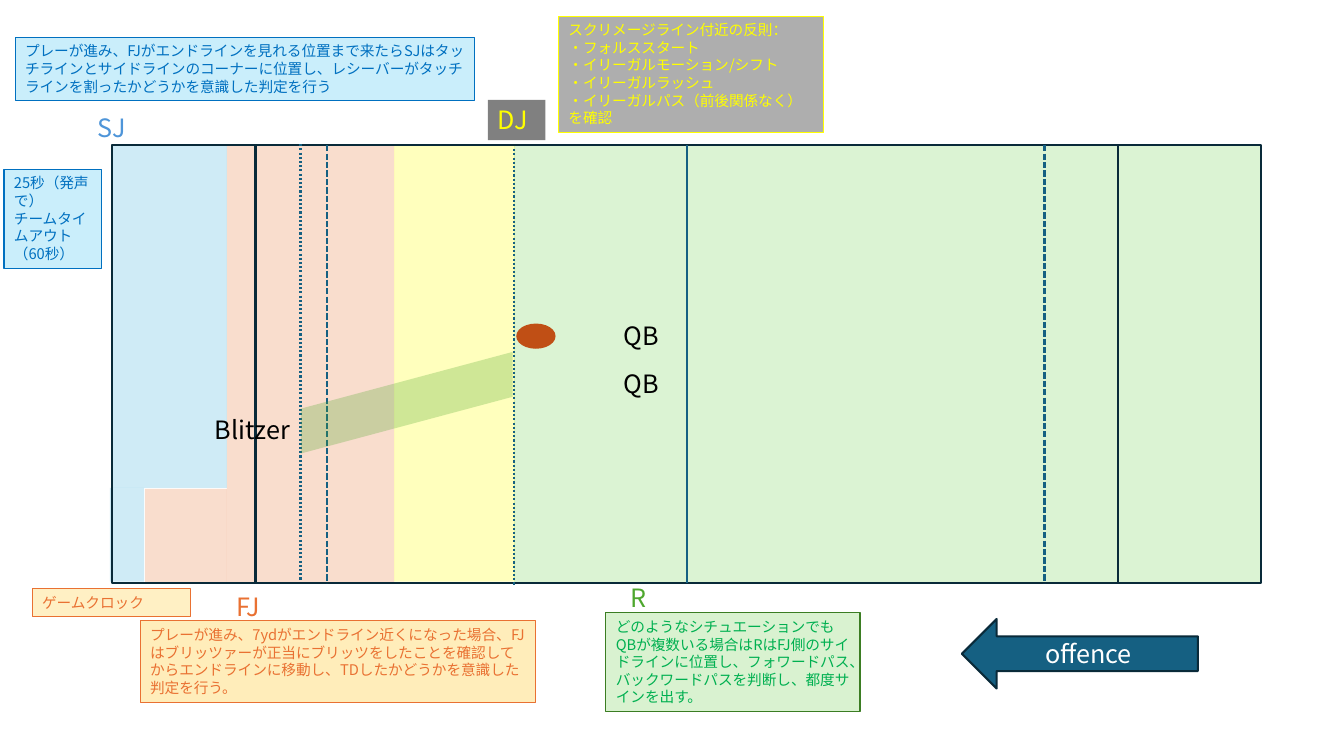
import pptx
import pptx.dml.color
import pptx.enum.dml
import pptx.enum.shapes
import pptx.enum.text
import pptx.oxml.ns
import pptx.util
from lxml import etree

FONT = "Noto Sans CJK JP"
SHAPE = pptx.enum.shapes.MSO_SHAPE
DASH = pptx.enum.dml.MSO_LINE
Inches = pptx.util.Inches
qn = pptx.oxml.ns.qn


def paint(fmt, color, alpha=None):
    """Give a fill a solid hex colour, with an opacity in percent if wanted."""
    fmt.solid()
    fmt.fore_color.rgb = pptx.dml.color.RGBColor.from_string(color)
    if alpha is not None:
        clr = fmt._xPr.find(qn("a:solidFill"))[0]
        etree.SubElement(clr, qn("a:alpha"), val=str(alpha * 1000))


def add_box(shapes, kind, x, y, w, h, fill=None, alpha=None, line=None, width=1.5):
    """Add a preset shape with a plain fill and outline."""
    sp = shapes.add_shape(kind, Inches(x), Inches(y), Inches(w), Inches(h))
    sp.shadow.inherit = False
    if fill:
        paint(sp.fill, fill, alpha)
    else:
        sp.fill.background()
    if line:
        paint(sp.line.fill, line)
        sp.line.width = pptx.util.Pt(width)
    else:
        sp.line.fill.background()
    return sp


def add_line(shapes, x, top, bottom, dash=None):
    """Add a vertical field line."""
    c = shapes.add_connector(pptx.enum.shapes.MSO_CONNECTOR.STRAIGHT,
                             Inches(x), Inches(top), Inches(x), Inches(bottom))
    paint(c.line.fill, "156082")
    c.line.width = pptx.util.Pt(1.5)
    if dash:
        c.line.dash_style = dash
    etree.SubElement(c._element.spPr, qn("a:effectLst"))


def write(sp, lines, size, color, align="LEFT", anchor="TOP", grow=True):
    """Write one paragraph for each line of text."""
    tf = sp.text_frame
    tf.word_wrap = True
    if grow:
        tf.auto_size = pptx.enum.text.MSO_AUTO_SIZE.SHAPE_TO_FIT_TEXT
    tf.vertical_anchor = pptx.enum.text.MSO_ANCHOR[anchor]
    for i, text in enumerate(lines):
        p = tf.add_paragraph() if i else tf.paragraphs[0]
        p.alignment = pptx.enum.text.PP_ALIGN[align]
        r = p.add_run()
        r.text = text
        r.font.size = pptx.util.Pt(size)
        r.font.name = FONT
        paint(r.font.fill, color)
        etree.SubElement(r.font._element, qn("a:ea"), typeface=FONT)


def add_label(s, x, y, text, color="000000"):
    """Add the name of a player or an official."""
    sp = s.shapes.add_textbox(Inches(x), Inches(y), Inches(1.25), Inches(0.4))
    write(sp, [text], 18, color)


def add_note(s, x, y, w, h, lines, color, fill, line, alpha=None):
    """Add an outlined note."""
    sp = add_box(s.shapes, SHAPE.RECTANGLE, x, y, w, h, fill, alpha, line, 0.75)
    write(sp, lines, 10.5, color)


def add_zones(s, x, y, w, h):
    """Shade the areas that each official covers."""
    split = 3.4
    low = h - split
    for dx, dy, zw, zh, color, alpha in [
        (0, 0, 1.14, split, "0F9ED5", 20),
        (0.33, split + 0.01, 0.81, low - 0.01, "E97132", 24),
        (2.8, 0.01, 1.2, h - 0.02, "FFFF00", 26),
        (3.99, 0, w - 3.99, h, "8ED973", 31),
        (1.14, 0.01, 1.66, h - 0.01, "E97132", 24),
        (-0.02, split, 0.34, low - 0.01, "0F9ED5", 20),
    ]:
        add_box(s.shapes, SHAPE.RECTANGLE, x + dx, y + dy, zw, zh, color, alpha)


def add_field(s, x, y, w, h):
    """Draw the field outline, its lines, the ball and the blitz path."""
    field = s.shapes.add_group_shape().shapes
    add_box(field, SHAPE.FLOWCHART_PREDEFINED_PROCESS, x, y, w, h, line="092A39")
    add_line(field, x + w / 2, y, y + h)
    for dx in (2.13, 9.25):
        add_line(field, x + dx, y, y + h, DASH.SQUARE_DOT)
    add_box(s.shapes, SHAPE.OVAL, x + 4.01, y + 1.77, 0.39, 0.25, "C04F15")
    for dx, dy in ((1.87, -0.01), (3.99, 0.04)):
        add_line(s.shapes, x + dx, y + dy, y + dy + h, DASH.ROUND_DOT)
    blitz = add_box(s.shapes, SHAPE.PARALLELOGRAM, x + 1.78, y + 2.34, 2.29, 0.43,
                    "4EA72E", 27)
    blitz.adjustments[0] = 0.27
    blitz.rotation = 345


def add_people(s, x, y):
    """Name the players and officials around the field corner."""
    for dx, dy, text, color in [
        (0.92, 2.62, "Blitzer", "000000"),
        (4.98, 1.69, "QB", "000000"),
        (4.98, 2.17, "QB", "000000"),
        (5.05, 4.29, "R", "4EA72E"),
        (-0.24, -0.37, "SJ", "4E95D9"),
        (1.14, 4.38, "FJ", "E97132"),
    ]:
        add_label(s, x + dx, y + dy, text, color)
    dj = add_box(s.shapes, SHAPE.RECTANGLE, x + 3.73, y - 0.45, 0.57, 0.4, "808080")
    write(dj, ["DJ"], 18, "FFFF00")


def add_offence(s, x, y, w, h):
    """Add the arrow that shows the direction of the offence."""
    sp = add_box(s.shapes, SHAPE.LEFT_ARROW, x, y, w, h, "156082", line="092A39")
    write(sp, ["offence"], 18, "FFFFFF", "CENTER", "MIDDLE", False)


def add_notes(s):
    """Add the duties of each official."""
    blue = ("0070C0", "CAEEFB", "0070C0")
    orange = ("E97132", "FFC000", "E97132")
    add_note(s, 5.54, 0.16, 2.63, 1.16, [
        "スクリメージライン付近の反則：", "・フォルススタート",
        "・イリーガルモーション/シフト", "・イリーガルラッシュ",
        "・イリーガルパス（前後関係なく）", "を確認"], "FFFF00", "AEAEAE", "FFFF00")
    add_note(s, 0.32, 5.84, 1.57, 0.28, ["ゲームクロック"], *orange, 23)
    add_note(s, 0.04, 1.68, 0.97, 0.98,
             ["25秒（発声で）", "チームタイムアウト", "（60秒）"], *blue)
    add_note(s, 1.39, 6.16, 3.92, 0.81, [
        "プレーが進み、7ydがエンドライン近くになった場合、"
        "FJはブリッツァーが正当にブリッツをしたことを確認してから"
        "エンドラインに移動し、TDしたかどうかを意識した判定を行う。"], *orange, 27)
    add_note(s, 0.15, 0.37, 4.56, 0.63, [
        "プレーが進み、FJがエンドラインを見れる位置まで来たら"
        "SJはタッチラインとサイドラインのコーナーに位置し、"
        "レシーバーがタッチラインを割ったかどうかを意識した判定を行う"], *blue)
    add_note(s, 6.01, 6.08, 2.52, 0.98, [
        "どのようなシチュエーションでもQBが複数いる場合は"
        "RはFJ側のサイドラインに位置し、フォワードパス、"
        "バックワードパスを判断し、都度サインを出す。"], "00B050", "D9F2D0", "3B7D23")


def main():
    """Build the slide and save it."""
    prs = pptx.Presentation()
    prs.slide_width, prs.slide_height = Inches(13.33), Inches(7.5)
    s = prs.slides.add_slide(prs.slide_layouts[6])
    x, y, w, h = 1.11, 1.44, 11.4, 4.34
    add_zones(s, x, y, w, h)
    add_field(s, x, y, w, h)
    add_people(s, x, y)
    add_offence(s, 9.54, 6.14, 2.34, 0.69)
    add_notes(s)
    prs.save("out.pptx")


if __name__ == "__main__":
    main()
